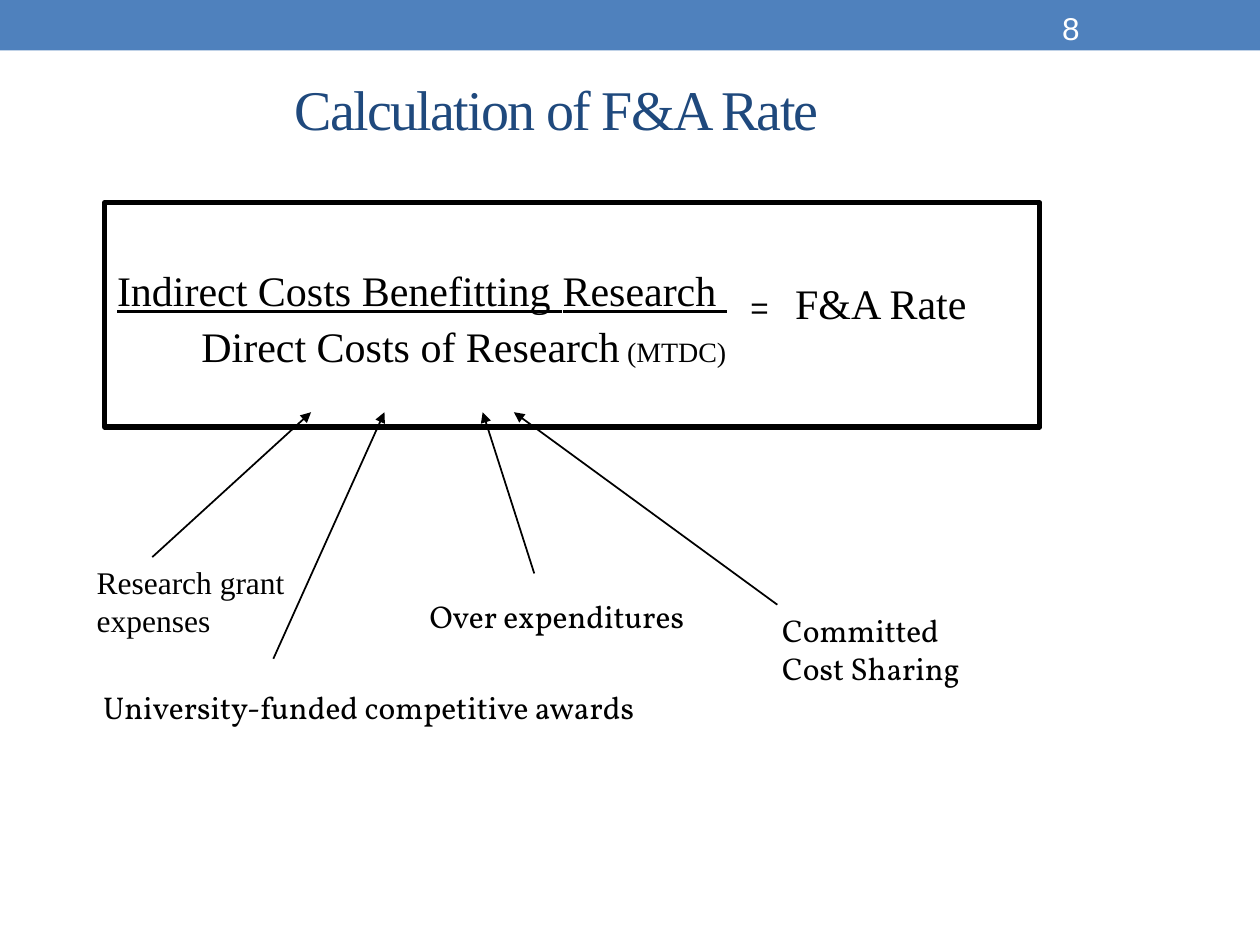
"""Build the slide that explains the F&A rate."""
from lxml.etree import SubElement
from pptx import Presentation
from pptx.dml.color import RGBColor
from pptx.enum.shapes import MSO_CONNECTOR, MSO_SHAPE
from pptx.enum.text import MSO_ANCHOR, PP_ALIGN
from pptx.oxml.ns import qn
from pptx.util import Cm, Pt

BLACK, WHITE, BLUE, NAVY = "000000", "FFFFFF", "4F81BD", "1F497D"
SERIF, SANS, LABEL = "Times New Roman", "Arial", "Vollkorn"


def paint(target, color):
    target.rgb = RGBColor.from_string(color)


def apply(target, values):
    for name, value in values.items():
        setattr(target, name, value)


class Deck:
    def __init__(self, width, height):
        self.deck = Presentation()
        apply(self.deck, {"slide_width": Cm(width), "slide_height": Cm(height)})
        self.slide = self.deck.slides.add_slide(self.deck.slide_layouts[6])
        self.shapes = self.slide.shapes
        self.base = {"name": SERIF, "size": Pt(18)}

    def rect(self, spot, fill=None, line=None, width=3):
        box = self.shapes.add_shape(MSO_SHAPE.RECTANGLE, *map(Cm, spot))
        box.shadow.inherit = False
        if fill:
            box.fill.solid()
            paint(box.fill.fore_color, fill)
        else:
            box.fill.background()
        if line:
            paint(box.line.color, line)
            box.line.width = Pt(width)
        else:
            box.line.fill.background()
        return box

    def text(self, spot, *lines, **style):
        box = self.shapes.add_textbox(*map(Cm, spot))
        self.label(box, *lines, **style)
        return box

    def label(self, box, *lines, color=BLACK, align=PP_ALIGN.LEFT, **style):
        frame = box.text_frame
        frame.word_wrap = True
        for index, line in enumerate(lines):
            para = frame.add_paragraph() if index else frame.paragraphs[0]
            para.alignment = align
            for words, extra in [(line, {})] if isinstance(line, str) else line:
                run = para.add_run()
                run.text = words
                apply(run.font, self.base | style | extra)
                paint(run.font.color, color)

    def arrow(self, start, end):
        link = self.shapes.add_connector(
            MSO_CONNECTOR.STRAIGHT, *map(Cm, start + end))
        paint(link.line.color, BLACK)
        link.line.width = Pt(1)
        props = link._element.spPr
        SubElement(props.find(qn("a:ln")), qn("a:tailEnd"), type="triangle")
        SubElement(props, qn("a:effectLst"))

    def save(self):
        self.deck.save("out.pptx")


def main():
    deck = Deck(25.4, 19.05)
    deck.rect((0, 0, 25.4, 1.02), fill=BLUE)

    title = deck.text((1.85, 0.84, 18.75, 2.67), "Calculation of F&A Rate",
                      color=NAVY, size=Pt(32), align=PP_ALIGN.CENTER)
    title.text_frame.vertical_anchor = MSO_ANCHOR.MIDDLE
    run = title.text_frame.paragraphs[0].runs[0]
    run._r.get_or_add_rPr().set("spc", "-100")

    ratio = deck.rect((2.11, 4.09, 18.85, 4.52), line=BLACK)
    apply(ratio.text_frame, {"vertical_anchor": MSO_ANCHOR.TOP,
                             "margin_top": Cm(1.25)})
    under = {"underline": True}
    deck.label(ratio,
               [("Indirect Costs Benefitting", under),
                (" ", under | {"name": SANS}), ("Research ", under)],
               [("Direct Costs of Research", {}), (" (MTDC)", {"size": Pt(16)})],
               size=Pt(24))
    below = ratio.text_frame.paragraphs[1]
    below.space_before = Pt(3)
    below._p.get_or_add_pPr().set("marL", str(Cm(1.7)))

    for spot, lines, face in (
            ((1.83, 13.74, 12.65, 1.09),
             ["University-funded competitive awards"], LABEL),
            ((8.41, 11.91, 5.82, 1.02), ["Over expenditures"], LABEL),
            ((15.52, 12.19, 4.52, 1.93), ["Committed", "Cost Sharing"], LABEL),
            ((1.7, 11.23, 4.57, 2), ["Research grant expenses"], SERIF)):
        deck.text(spot, *lines, name=face)

    tip = 8.31
    for start, end in (((5.51, 13.28), 7.75), ((10.77, 11.56), 9.73),
                       ((15.67, 12.19), 10.36), ((3.07, 11.23), 6.27)):
        deck.arrow(start, (end, tip))

    rate = deck.text((14.88, 5.46, 5.23, 1.27),
                     [("=\t", {"name": SANS}), ("F&A Rate", {"size": Pt(24)})])
    props = rate.text_frame.paragraphs[0]._p.get_or_add_pPr()
    tabs = SubElement(props, qn("a:tabLst"))
    SubElement(tabs, qn("a:tab"), pos=str(Cm(0.9)), algn="l")

    deck.text((21.16, 0.05, 2.97, 0.91), "8", color=WHITE, name=SANS)
    deck.save()


if __name__ == "__main__":
    main()
